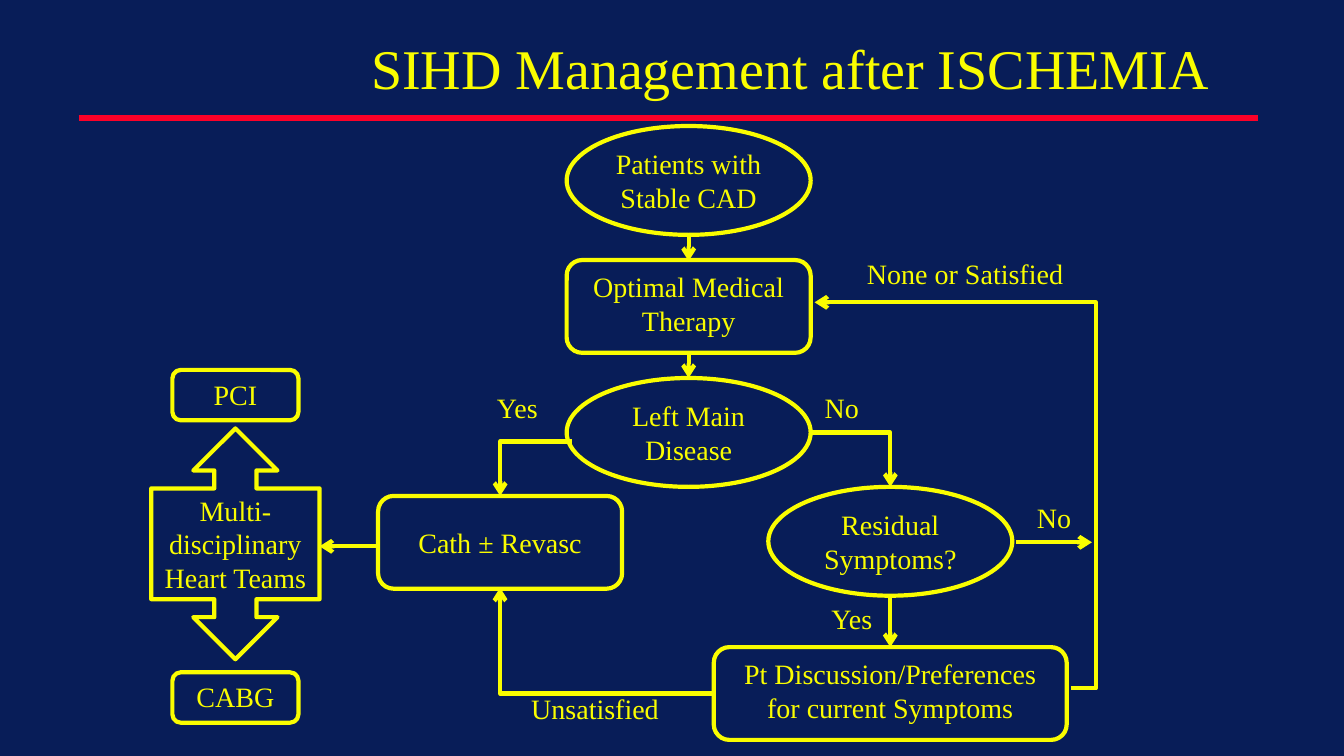
"""Build the SIHD management flowchart slide."""
from lxml.etree import SubElement
from pptx import Presentation
from pptx.dml.color import RGBColor
from pptx.enum.shapes import MSO_CONNECTOR, MSO_SHAPE
from pptx.enum.text import MSO_ANCHOR, MSO_AUTO_SIZE, PP_ALIGN
from pptx.oxml.ns import qn
from pptx.util import Inches, Pt

COLORS = {"background": "081D58", "yellow": "FAFD00", "red": "FC0128"}
FONT = "Times New Roman"
TITLE = "SIHD Management after ISCHEMIA"
TOP, MIDDLE, BOTTOM = MSO_ANCHOR.TOP, MSO_ANCHOR.MIDDLE, MSO_ANCHOR.BOTTOM
LEFT, CENTER, RIGHT = PP_ALIGN.LEFT, PP_ALIGN.CENTER, PP_ALIGN.RIGHT

NODE_WIDTH = 2.42
SIZES = {
    MSO_SHAPE.OVAL: (NODE_WIDTH, 1.08),
    MSO_SHAPE.ROUNDED_RECTANGLE: (NODE_WIDTH, 0.92),
}
STEPS = [
    (MSO_SHAPE.OVAL, 5.62, 1.25, "Patients with Stable CAD", TOP),
    (MSO_SHAPE.ROUNDED_RECTANGLE, 5.62, 2.58, "Optimal Medical Therapy", TOP),
    (MSO_SHAPE.OVAL, 5.62, 3.75, "Left Main Disease", TOP),
    (MSO_SHAPE.ROUNDED_RECTANGLE, 3.75, 4.92, "Cath ± Revasc", MIDDLE),
    (MSO_SHAPE.OVAL, 7.62, 4.83, "Residual Symptoms?", TOP),
]
DISCUSSION = ("Pt Discussion/Preferences for current Symptoms", (7.08, 6.42, 3.5, 0.92))
HEART_TEAM = ("Multi-disciplinary Heart Teams", (1.5, 4.25, 1.67, 2.29))
TREATMENTS = [("PCI", 3.67), ("CABG", 6.67)]
LABELS = [
    ("Yes", 4.83, 3.83, 0.75, LEFT),
    ("No", 8.08, 3.83, 0.75, LEFT),
    ("Unsatisfied", 5.17, 6.81, 1.67, LEFT),
    ("Yes", 8.0, 5.92, 0.75, RIGHT),
    ("None or Satisfied", 8.5, 2.5, 2.17, LEFT),
    ("No", 10.08, 4.92, 0.75, CENTER),
]
STRAIGHT_ARROWS = [
    ((6.83, 2.34), (6.83, 2.59)),
    ((6.83, 3.5), (6.83, 3.75)),
    ((8.83, 5.92), (8.83, 6.42)),
    ((10.08, 5.38), (10.83, 5.38)),
    ((3.75, 5.42), (3.17, 5.42)),
]
CORNER_ARROWS = [
    ((5.67, 4.38), (4.96, 4.92)),
    ((8.04, 4.29), (8.83, 4.83)),
    ((7.08, 6.88), (4.96, 5.83)),
]
RETURN_ARROW = ((10.62, 6.83), (8.08, 3.0))
RETURN_BEND = 10.87


def color(name):
    return RGBColor.from_string(COLORS[name])


def write(text_frame, text, align, anchor, size=20):
    text_frame.word_wrap = True
    text_frame.auto_size = MSO_AUTO_SIZE.NONE
    text_frame.vertical_anchor = anchor
    paragraph = text_frame.paragraphs[0]
    paragraph.alignment = align
    run = paragraph.add_run()
    run.text = text
    run.font.name = FONT
    run.font.size = Pt(size)
    run.font.color.rgb = color("yellow")


def add_node(slide, kind, box, text, anchor=TOP):
    shape = slide.shapes.add_shape(kind, *map(Inches, box))
    shape.shadow.inherit = False
    shape.fill.background()
    shape.line.color.rgb = color("yellow")
    shape.line.width = Pt(3)
    write(shape.text_frame, text, CENTER, anchor)
    return shape


def add_line(slide, start, end, kind=MSO_CONNECTOR.STRAIGHT, tint="yellow", width=3, arrow=True):
    connector = slide.shapes.add_connector(kind, *map(Inches, start + end))
    connector.line.color.rgb = color(tint)
    connector.line.width = Pt(width)
    properties = connector._element.spPr
    if arrow:
        SubElement(properties.find(qn("a:ln")), qn("a:tailEnd"), type="arrow")
    SubElement(properties, qn("a:effectLst"))
    return properties


def add_corner_arrow(slide, start, end):
    properties = add_line(slide, start, end, MSO_CONNECTOR.ELBOW)
    properties.find(qn("a:prstGeom")).set("prst", "bentConnector2")
    if end[0] < start[0]:
        frame = properties.find(qn("a:xfrm"))
        frame.set("rot", "10800000")
        frame.set("flipH", "0")
        frame.set("flipV", "1" if end[1] > start[1] else "0")


def add_return_arrow(slide, start, end):
    properties = add_line(slide, start, end, MSO_CONNECTOR.ELBOW)
    geometry = properties.find(qn("a:prstGeom"))
    guides = geometry.find(qn("a:avLst"))
    if guides is None:
        guides = SubElement(geometry, qn("a:avLst"))
    bend = round((RETURN_BEND - start[0]) / (end[0] - start[0]) * 100000)
    SubElement(guides, qn("a:gd"), name="adj1", fmla=f"val {bend}")


def main():
    presentation = Presentation()
    presentation.slide_width = Inches(13.33)
    presentation.slide_height = Inches(7.5)
    slide = presentation.slides.add_slide(presentation.slide_layouts[5])
    slide.background.fill.solid()
    slide.background.fill.fore_color.rgb = color("background")

    add_line(slide, (0.78, 1.17), (12.48, 1.17), tint="red", width=4, arrow=False)
    title = slide.shapes.title
    title.left, title.top, title.width, title.height = map(Inches, (3.46, 0.09, 8.75, 0.96))
    write(title.text_frame, TITLE, CENTER, BOTTOM, 40)

    for kind, left, top, text, anchor in STEPS:
        add_node(slide, kind, (left, top, *SIZES[kind]), text, anchor)
    text, box = DISCUSSION
    add_node(slide, MSO_SHAPE.ROUNDED_RECTANGLE, box, text)
    text, box = HEART_TEAM
    callout = add_node(slide, MSO_SHAPE.UP_DOWN_ARROW_CALLOUT, box, text)
    for index, value in enumerate((0.25, 0.25, 0.25, 0.48)):
        callout.adjustments[index] = value
    for text, top in TREATMENTS:
        add_node(slide, MSO_SHAPE.ROUNDED_RECTANGLE, (1.71, top, 1.25, 0.5), text)

    for start, end in STRAIGHT_ARROWS:
        add_line(slide, start, end)
    for start, end in CORNER_ARROWS:
        add_corner_arrow(slide, start, end)
    add_return_arrow(slide, *RETURN_ARROW)

    for text, left, top, width, align in LABELS:
        label = slide.shapes.add_textbox(*map(Inches, (left, top, width, 0.44)))
        write(label.text_frame, text, align, TOP)

    presentation.save("out.pptx")


if __name__ == "__main__":
    main()
